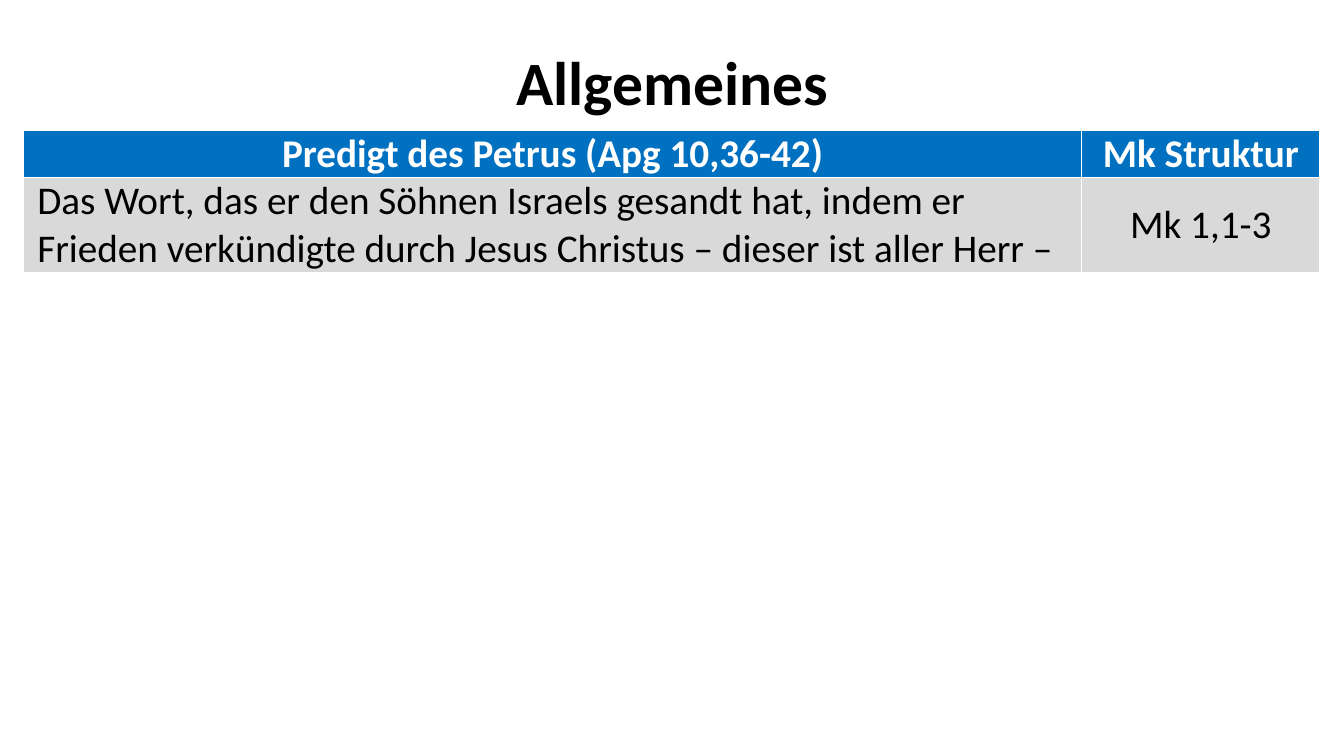
from pptx import Presentation
from pptx.dml.color import RGBColor
from pptx.enum.text import MSO_ANCHOR as Anchor, PP_ALIGN as Align
from pptx.util import Inches, Pt

# Content
TITLE = "Allgemeines"
ROWS = [
    ("Predigt des Petrus (Apg 10,36-42)", "Mk Struktur"),
    ("Das Wort, das er den Söhnen Israels gesandt hat, indem er Frieden "
     "verkündigte durch Jesus Christus – dieser ist aller Herr –", "Mk 1,1-3"),
]
COLUMN_WIDTHS = (10.5, 2.36)
ROW_HEIGHTS = (0.47, 0.94)

FONT = "Calibri"
BLACK = RGBColor(0x00, 0x00, 0x00)
WHITE = RGBColor(0xFF, 0xFF, 0xFF)
BLUE = RGBColor(0x00, 0x70, 0xC0)
GREY = RGBColor(0xD9, 0xD9, 0xD9)


def style(para, size, color, bold, align):
    para.alignment = align
    para.font.name = FONT
    para.font.size = Pt(size)
    para.font.bold = bold
    para.font.color.rgb = color


deck = Presentation()
deck.slide_width, deck.slide_height = Inches(13.33), Inches(7.5)
page = deck.slides.add_slide(deck.slide_layouts[6])

# Title
box = page.shapes.add_textbox(Inches(0.92), Inches(0.4), Inches(11.5), Inches(0.89))
frame = box.text_frame
frame.word_wrap = True
frame.vertical_anchor = Anchor.MIDDLE
frame.text = TITLE
style(frame.paragraphs[0], 44, BLACK, True, Align.CENTER)
frame.paragraphs[0].line_spacing = 0.9

# Table: the default table style supplies the white borders
table = page.shapes.add_table(
    len(ROWS), len(COLUMN_WIDTHS), Inches(0.23), Inches(1.29),
    Inches(sum(COLUMN_WIDTHS)), Inches(sum(ROW_HEIGHTS))).table
for column, width in zip(table.columns, COLUMN_WIDTHS):
    column.width = Inches(width)
for row, height in zip(table.rows, ROW_HEIGHTS):
    row.height = Inches(height)

for r, texts in enumerate(ROWS):
    header = r == 0
    for c, text in enumerate(texts):
        cell = table.cell(r, c)
        cell.text = text
        cell.vertical_anchor = Anchor.MIDDLE
        cell.margin_left = cell.margin_right = Inches(0.14)
        cell.margin_top = cell.margin_bottom = 0
        cell.fill.solid()
        cell.fill.fore_color.rgb = BLUE if header else GREY
        align = Align.CENTER if header or c > 0 else Align.LEFT
        style(cell.text_frame.paragraphs[0], 28, WHITE if header else BLACK,
              header, align)

deck.save("out.pptx")
